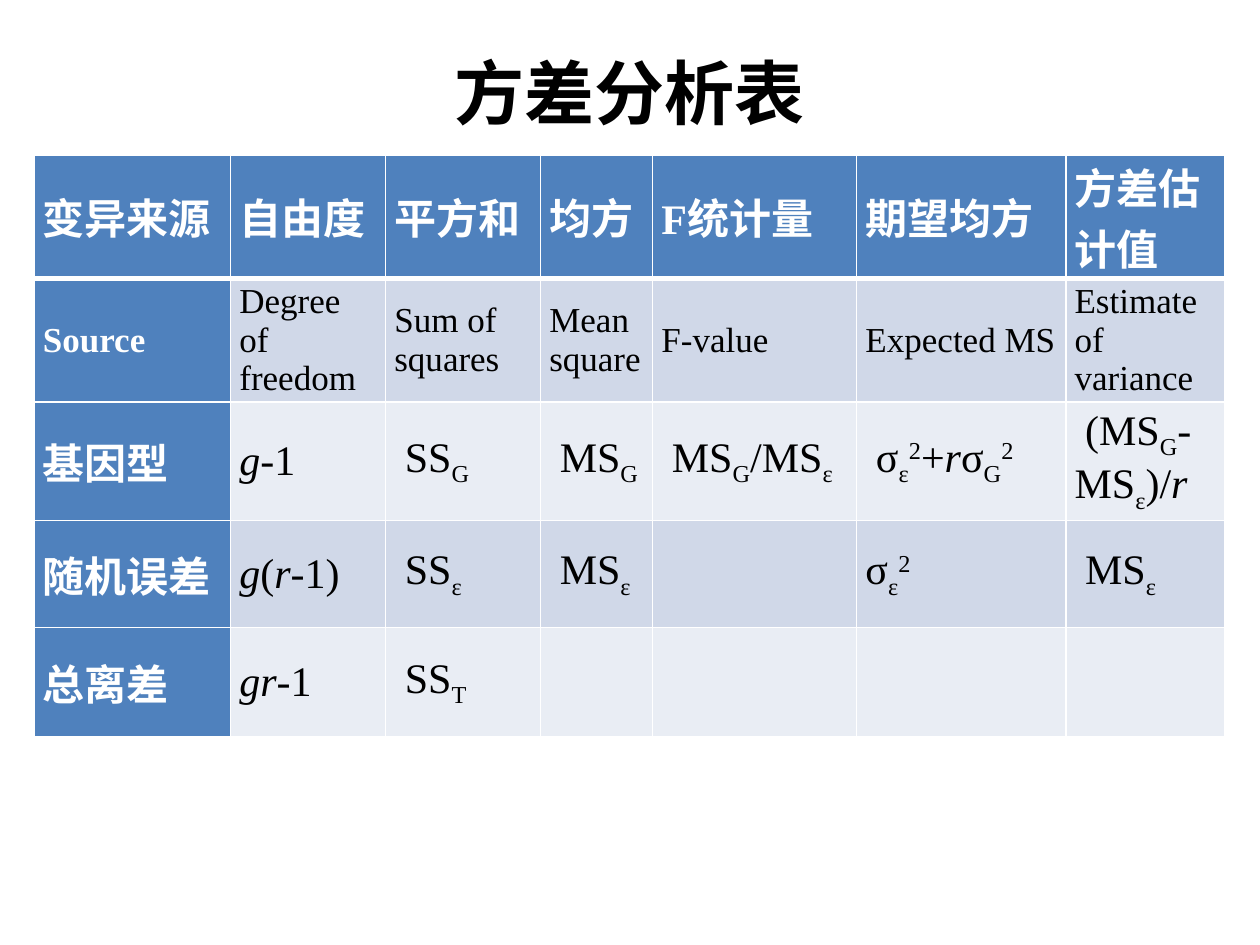
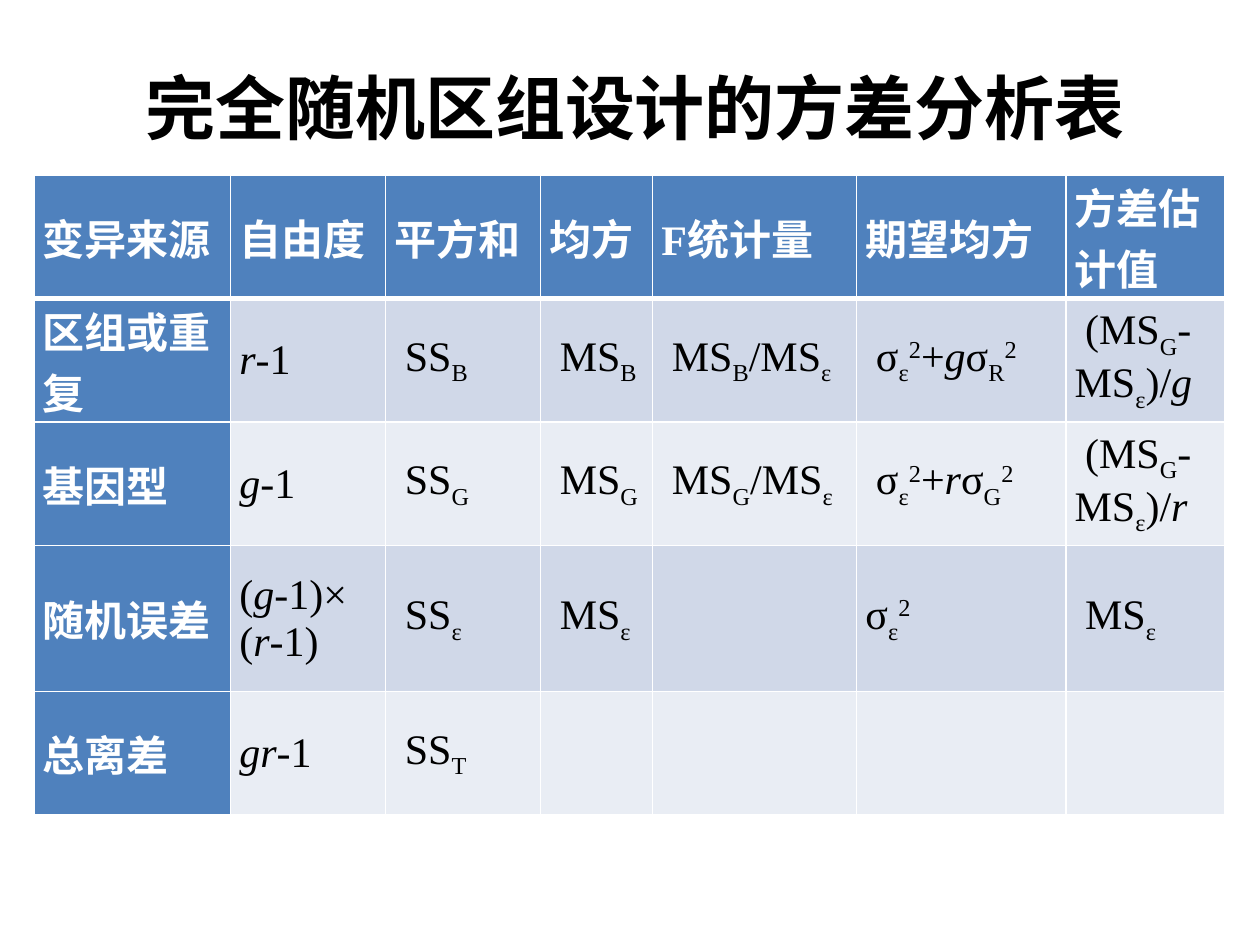
import dataclasses
import itertools
import typing

import lxml.etree
import pptx
import pptx.dml.color
import pptx.enum.text
import pptx.oxml.ns
import pptx.util

Inches = pptx.util.Inches
Pt = pptx.util.Pt
qn = pptx.oxml.ns.qn

# Shared look
WHITE, BLACK, BLUE = "FFFFFF", "000000", "4F81BD"
BANDS = ("D0D8E8", "E9EDF4")
SERIF, SANS = "Times New Roman", "Noto Sans CJK SC"
MIDDLE = pptx.enum.text.MSO_ANCHOR.MIDDLE
LEFT = 0.27
COLS = (1.56, 1.23, 1.23, 0.89, 1.62, 1.66, 1.26)
PAD = {
    "margin_left": Inches(0.07), "margin_right": Inches(0.07),
    "margin_top": 0, "margin_bottom": 0, "vertical_anchor": MIDDLE,
}
FRAME = {
    "vertical_anchor": MIDDLE, "word_wrap": True,
    "auto_size": pptx.enum.text.MSO_AUTO_SIZE.NONE,
}

# Table text: _ lowers, ^ raises and ~ slants the next letter
MARKS = {"_": ("base", -25000), "^": ("base", 30000), "~": ("italic", True)}
HEAD = ("变异来源", "自由度", "平方和", "均方", "F统计量", "期望均方", "方差估计值")
WORDS = ("Source", "Degree of freedom", "Sum of squares", "Mean square",
         "F-value", "Expected MS", "Estimate of variance")


def effect(name: str, sub: str, factor: str, own: str) -> tuple[str, ...]:
    """Row of a tested effect; own is the letter of its degrees of freedom."""
    return (name, f"~{own}-1", f" SS_{sub}", f" MS_{sub}", f" MS_{sub}/MS_ε",
            f" σ_ε^2+~{factor}σ_{'R' if sub == 'B' else sub}^2",
            f" (MS_G-MS_ε)/~{factor}")


def error(free: str) -> tuple[str, ...]:
    return ("随机误差", free, " SS_ε", " MS_ε", "", "σ_ε^2", " MS_ε")


GENE = effect("基因型", "G", "r", "g")
BLOCK = effect("区组或重复", "B", "g", "r")
TOTAL = ("总离差", "~g~r-1", " SS_T", "", "", "", "")


@dataclasses.dataclass
class Page:
    title: str
    box: tuple[float, float, float, float]
    top: float
    high: tuple[float, ...]
    rows: tuple[tuple[str, ...], ...]


PAGES = (
    Page("方差分析表", (1.61, 0.29, 6.77, 0.87), 1.23,
         (0.98, 0.98, 0.94, 0.85, 0.87),
         (HEAD, WORDS, GENE, error("~g(~r-1)"), TOTAL)),
    Page("完全随机区组设计的方差分析表", (0.75, 0.46, 8.58, 0.77), 1.39,
         (0.98, 0.98, 0.98, 1.16, 0.98),
         (HEAD, BLOCK, GENE, error("(~g-1)×\n(~r-1)"), TOTAL)),
)


def shade(code: str) -> pptx.dml.color.RGBColor:
    return pptx.dml.color.RGBColor.from_string(code)


def apply(item: typing.Any, form: dict[str, typing.Any]) -> None:
    for key, value in form.items():
        setattr(item, key, value)


def style(run: typing.Any, size: int, face: str, code: str, bold: bool,
          italic: bool = False, base: int = 0) -> None:
    apply(run.font, {"size": Pt(size), "name": face, "bold": bold, "italic": italic})
    run.font.color.rgb = shade(code)
    props = run.font._element
    lxml.etree.SubElement(props, qn("a:ea")).set("typeface", SANS)
    if base:
        props.set("baseline", str(base))


def split(text: str) -> typing.Iterator[tuple[str, dict[str, typing.Any]]]:
    """Yield each run of letters that share one style."""
    marked, mark = [], ""
    for sign in text:
        if sign in MARKS:
            mark = sign
        else:
            marked.append((mark, sign))
            mark = ""
    for mark, group in itertools.groupby(marked, key=lambda pair: pair[0]):
        yield "".join(sign for _, sign in group), dict([MARKS[mark]] if mark else [])


def edge(cell: typing.Any, side: str, width: float) -> None:
    props = cell._tc.get_or_add_tcPr()
    line = lxml.etree.SubElement(props, qn(f"a:ln{side}"), w=str(Pt(width)))
    fill = lxml.etree.SubElement(line, qn("a:solidFill"))
    lxml.etree.SubElement(fill, qn("a:srgbClr"), val=WHITE)


def write(cell: typing.Any, text: str, row: int, col: int) -> None:
    lead = row == 0 or col == 0
    apply(cell, PAD)
    # A thick line parts the head from the body
    thick = {(0, "B"), (1, "T")}
    for side in "LRTB":
        edge(cell, side, 3 if (row, side) in thick else 1)
    cell.fill.solid()
    cell.fill.fore_color.rgb = shade(BLUE if lead else BANDS[(row - 1) % 2])
    size = 20 if text in WORDS else 24
    for index, line in enumerate(text.split("\n")):
        frame = cell.text_frame
        para = frame.add_paragraph() if index else frame.paragraphs[0]
        for part, form in split(line):
            run = para.add_run()
            run.text = part
            style(run, size, SERIF, WHITE if lead else BLACK, lead, **form)


def head(slide: typing.Any, page: Page) -> None:
    title = slide.shapes.title
    sides = ("left", "top", "width", "height")
    apply(title, dict(zip(sides, map(Inches, page.box))))
    apply(title.text_frame, FRAME)
    para = title.text_frame.paragraphs[0]
    para.alignment = pptx.enum.text.PP_ALIGN.CENTER
    run = para.add_run()
    run.text = page.title
    style(run, 40, SANS, BLACK, True)


def grid(slide: typing.Any, page: Page) -> None:
    spot = map(Inches, (LEFT, page.top, sum(COLS), sum(page.high)))
    table = slide.shapes.add_table(len(page.rows), len(COLS), *spot).table
    apply(table, {"first_row": False, "horz_banding": False})
    for col, width in zip(table.columns, COLS):
        col.width = Inches(width)
    for row, height in zip(table.rows, page.high):
        row.height = Inches(height)
    for row, texts in enumerate(page.rows):
        for col, text in enumerate(texts):
            write(table.cell(row, col), text, row, col)


def main() -> None:
    deck = pptx.Presentation()
    apply(deck, {"slide_width": Inches(10), "slide_height": Inches(7.5)})
    for page in PAGES:
        slide = deck.slides.add_slide(deck.slide_layouts[5])
        head(slide, page)
        grid(slide, page)
    deck.save("out.pptx")


if __name__ == "__main__":
    main()
